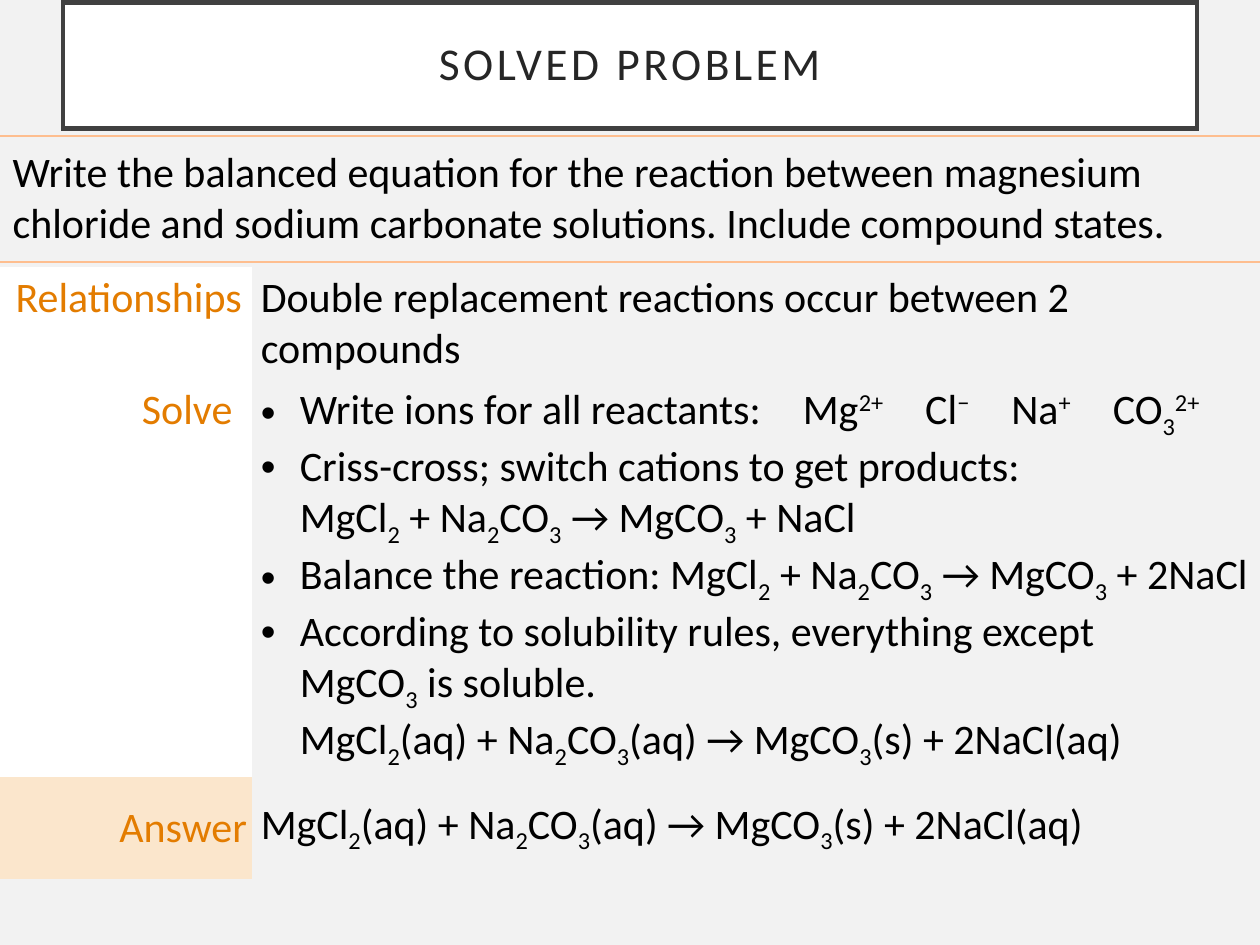
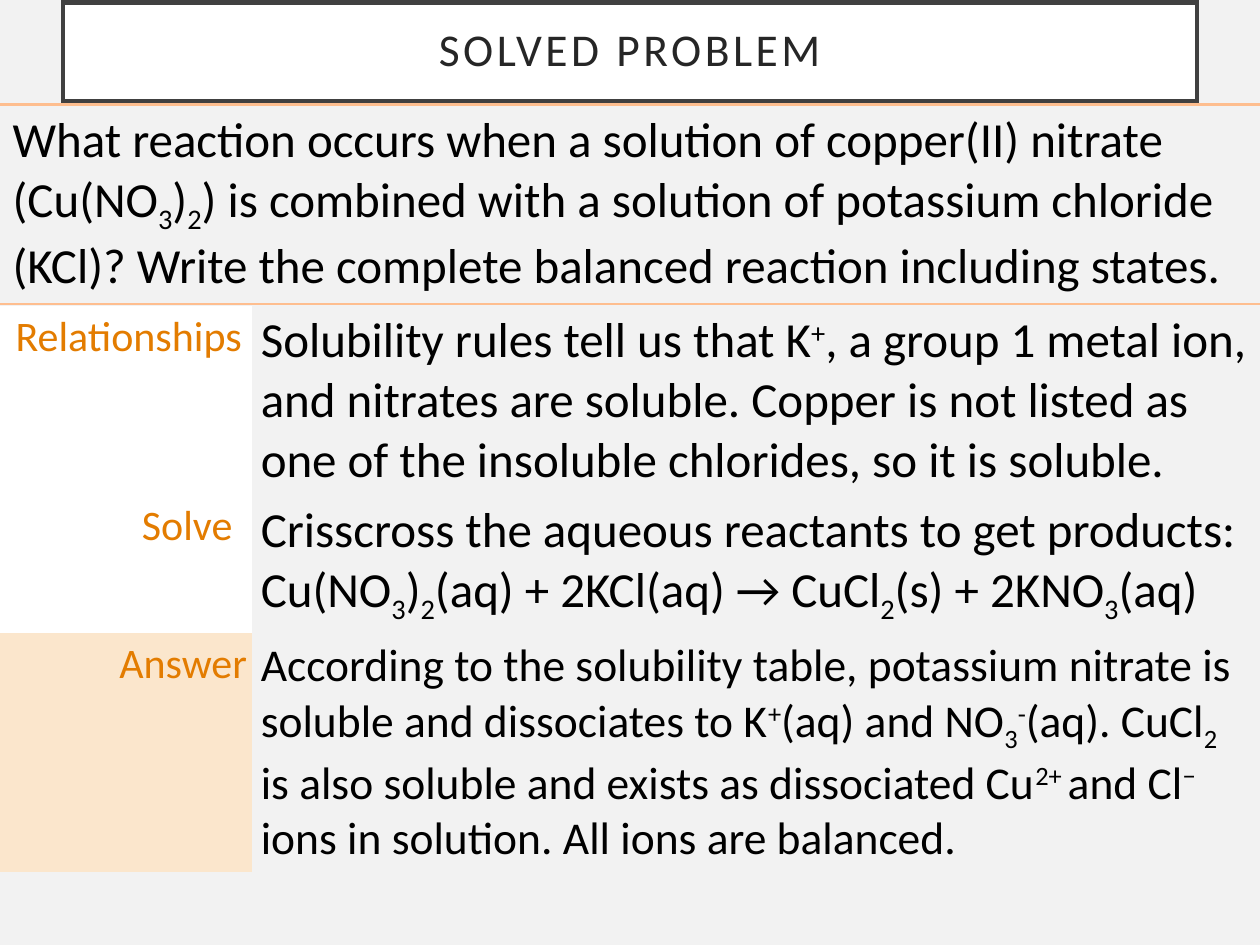
import pptx
import pptx.util
import pptx.dml.color
import pptx.enum.shapes
import pptx.enum.text
import pptx.oxml
import lxml.etree

PX = 9144
FONT = "Calibri"
INK, ORANGE, WHITE, PEACH = "000000", "E37C00", "FFFFFF", "FBE6CC"
GRAY, DARK, TITLE, RULE = "F2F2F2", "404040", "262626", "FEBE8F"
PLAIN = "{2D5ABB26-0587-4C30-8999-92F81FD0307C}"
NS = "http://schemas.openxmlformats.org/drawingml/2006/main"
ALIGN = pptx.enum.text.PP_ALIGN
TOP = pptx.enum.text.MSO_ANCHOR.TOP
MID = pptx.enum.text.MSO_ANCHOR.MIDDLE
BASE = {"_": "-25000", "^": "30000"}
LABELS = ["Relationships", "Solve ", "Answer"]
EM, HARD = chr(8195), chr(160)


def rgb(code):
    return pptx.dml.color.RGBColor.from_string(code)


def write(frame, lines, size, color):
    for i, line in enumerate(lines):
        para = frame.paragraphs[0] if i == 0 else frame.add_paragraph()
        if line.startswith("• "):
            line = line[2:]
            props = para._p.get_or_add_pPr()
            props.set("marL", str(31 * PX))
            props.set("indent", str(-31 * PX))
            lxml.etree.SubElement(props, f"{{{NS}}}buFont", typeface="Arial")
            lxml.etree.SubElement(props, f"{{{NS}}}buChar", char="•")
        for j, part in enumerate(line.split("|")):
            for k, piece in enumerate(part.split("\n")):
                if k:
                    para.add_line_break()
                if not piece:
                    continue
                run = para.add_run()
                run.text = piece[1:] if j % 2 else piece
                run.font.name = FONT
                run.font.size = pptx.util.Pt(size)
                run.font.color.rgb = rgb(color)
                if j % 2:
                    run._r.get_or_add_rPr().set("baseline", BASE[piece[0]])


FINAL = "MgCl|_2|(aq) + Na|_2|CO|_3|(aq) → MgCO|_3|(s) + 2NaCl(aq)"
SALTS = f"MgCl|_2|{HARD}+ Na|_2|CO|_3|{HARD}→ MgCO|_3|{HARD}+ "
IONS = EM.join(["Write ions for all reactants:", "Mg|^2+|", "Cl|^−|", "Na|^+|", "CO|_3||^2+|"])
SLIDES = [
    {
        "title": (2, 100),
        "ask": (108, 100, 24),
        "text": "Write the balanced equation for the reaction between magnesium chloride and sodium carbonate solutions. Include compound states.",
        "top": 212,
        "steps": [
            (89, 24, MID, TOP, ["Double replacement reactions occur between 2 compounds"]),
            (315, 24, MID, TOP, [
                "• " + IONS,
                "• Criss-cross; switch cations to get products:\n" + SALTS + "NaCl",
                "• Balance the reaction: " + SALTS + "2NaCl",
                f"• According to solubility rules, everything except MgCO|_3|{HARD}is soluble.\n" + FINAL,
            ]),
            (81, 24, MID, MID, [FINAL]),
        ],
    },
    {
        "title": (2, 78),
        "ask": (83, 158, 28),
        "text": "What reaction occurs when a solution of copper(II) nitrate (Cu(NO|_3|)|_2|) is combined with a solution of potassium chloride (KCl)? Write the complete balanced reaction including states.",
        "top": 243,
        "steps": [
            (150, 28, TOP, TOP, ["Solubility rules tell us that K|^+|, a group 1 metal ion, and nitrates are soluble. Copper is not listed as one of the insoluble chlorides, so it is soluble."]),
            (109, 28, TOP, TOP, [
                "Crisscross the aqueous reactants to get products:",
                "Cu(NO|_3|)|_2|(aq) + 2KCl(aq) → CuCl|_2|(s) + 2KNO|_3|(aq)",
            ]),
            (189, 26, MID, TOP, ["According to the solubility table, potassium nitrate is soluble and dissociates to K|^+|(aq) and NO|_3||^-|(aq). CuCl|_2 |is also soluble and exists as dissociated Cu|^2+ |and Cl|^−| ions in solution. All ions are balanced."]),
        ],
    },
]

deck = pptx.Presentation()
deck.slide_width = 1000 * PX
deck.slide_height = 750 * PX

for data in SLIDES:
    slide = deck.slides.add_slide(deck.slide_layouts[6])
    slide.background.fill.solid()
    slide.background.fill.fore_color.rgb = rgb(GRAY)

    top, high = data["title"]
    box = slide.shapes.add_shape(pptx.enum.shapes.MSO_SHAPE.RECTANGLE, 50 * PX, top * PX, 900 * PX, high * PX)
    box.shadow.inherit = False
    box.fill.solid()
    box.fill.fore_color.rgb = rgb(WHITE)
    box.line.color.rgb = rgb(DARK)
    box.line.width = pptx.util.Pt(2.5)
    lxml.etree.SubElement(box.line._get_or_add_ln(), f"{{{NS}}}miter", lim="800000")
    frame = box.text_frame
    frame.word_wrap = True
    frame.vertical_anchor = MID
    frame.margin_left = frame.margin_right = frame.margin_top = frame.margin_bottom = 20 * PX
    write(frame, ["SOLVED PROBLEM"], 26, TITLE)
    head = frame.paragraphs[0]
    head.alignment = ALIGN.CENTER
    head.line_spacing = 0.9
    head.runs[0]._r.get_or_add_rPr().set("spc", "200")

    top, high, size = data["ask"]
    ask = slide.shapes.add_table(1, 1, 0, top * PX, 1000 * PX, high * PX).table
    steps = data["steps"]
    total = sum(step[0] for step in steps)
    grid = slide.shapes.add_table(3, 2, 0, data["top"] * PX, 1000 * PX, total * PX).table
    for table in (ask, grid):
        table.first_row = table.horz_banding = False
        table._tbl.tblPr.find(f"{{{NS}}}tableStyleId").text = PLAIN

    cell = ask.cell(0, 0)
    cell.vertical_anchor = MID
    for side in ("lnT", "lnB"):
        cell._tc.get_or_add_tcPr().append(pptx.oxml.parse_xml(
            f'<a:{side} xmlns:a="{NS}" w="19050"><a:solidFill>'
            f'<a:srgbClr val="{RULE}"/></a:solidFill></a:{side}>'))
    cell.fill.background()
    write(cell.text_frame, [data["text"]], size, INK)

    grid.columns[0].width = 200 * PX
    grid.columns[1].width = 800 * PX
    for row, (high, size, anchor, side, lines) in enumerate(steps):
        grid.rows[row].height = high * PX
        label, body = grid.cell(row, 0), grid.cell(row, 1)
        for cell in (label, body):
            cell.margin_top = cell.margin_bottom = 4 * PX
            cell.margin_left = cell.margin_right = 8 * PX
        label.fill.solid()
        label.fill.fore_color.rgb = rgb(PEACH if row == 2 else WHITE)
        label.vertical_anchor = side
        if row == 2:
            label.margin_right = 4 * PX
        write(label.text_frame, [LABELS[row]], 24, ORANGE)
        label.text_frame.paragraphs[0].alignment = ALIGN.RIGHT
        body.fill.background()
        body.margin_left = 7 * PX
        body.vertical_anchor = anchor
        write(body.text_frame, lines, size, INK)

deck.save("out.pptx")
